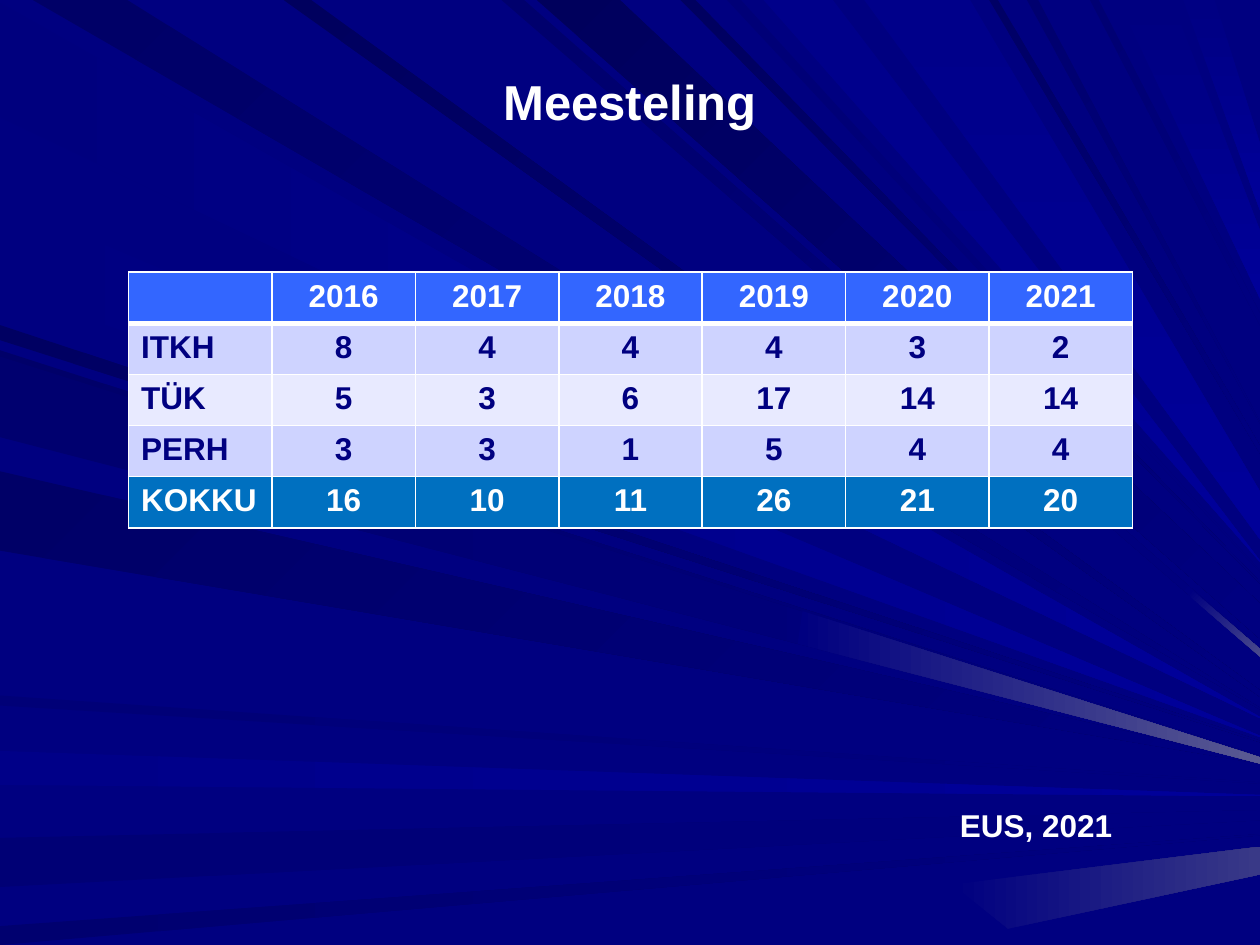
from lxml.etree import SubElement
from pptx import Presentation
from pptx.dml.color import RGBColor
from pptx.enum.text import MSO_ANCHOR, MSO_AUTO_SIZE, PP_ALIGN
from pptx.oxml.ns import qn
from pptx.util import Pt

PX = 9144  # EMU per px, 100 px to the inch
WIDTH, HEIGHT = 1000, 750
FONT = "Arial"
WHITE = "FFFFFF"
NAVY = "000080"
BRIGHT = "000099"
HEADER_FILL = "3366FF"
BAND_FILLS = ("CED3FF", "E8EAFF")
TOTAL_FILL = "0070C0"

# Each ray: start colour, its span on the starting edge, its tip on the right
# edge and, for rays that stay wide, the width of that tip.
LEFT_BRIGHT = [("00007E", 2, 93, 569), ("000088", 596, 623, 631), (NAVY, 159, 228, 584)]
LEFT_SOFT = [
    ("000075", 665, 704, 643, 8),
    ("00006F", 735, 750, 662),
    ("000077", 552, 560, 621),
    ("00006F", 283, 347, 601, 5),
]
LEFT_DARK = [("000062", 258, 270, 588), ("000069", 278, 342, 600), ("000067", 374, 437, 605)]
TOP_DARK = [
    ("000067", 26, 101, 562),
    ("00006D", 398, 416, 515, 6),
    ("00005C", 426, 492, 479, 28),
    ("000060", 540, 552, 462),
    ("00005E", 225, 247, 548, 5),
    ("000077", 577, 588, 453),
    ("000065", 785, 792, 354, 6),
    ("00006F", 815, 824, 335),
    ("000073", 865, 872, 249, 9),
]
TOP_BRIGHT = [
    ("00008A", 606, 661, 445),
    (NAVY, 887, 930, 183, 54),
    ("000083", 939, 964, 114, 53),
    ("00008A", 686, 770, 390, 38),
]

# Pale ends of rays: end colour, clockwise angle, corners
GLINTS = [
    ("5A5A92", 0, [(637, 485), (633, 511), (WIDTH, 606), (WIDTH, 601)]),
    ("4A4A8C", 45, [(947, 469), (944, 473), (WIDTH, 521), (WIDTH, 515)]),
    ("393987", 0, [(756, 702), (800, 737), (WIDTH, 694), (WIDTH, 672)]),
]

CASES = [
    ("", "2016", "2017", "2018", "2019", "2020", "2021"),
    ("ITKH", "8", "4", "4", "4", "3", "2"),
    ("TÜK", "5", "3", "6", "17", "14", "14"),
    ("PERH", "3", "3", "1", "5", "4", "4"),
    ("KOKKU", "16", "10", "11", "26", "21", "20"),
]


def px(*lengths):
    return [length * PX for length in lengths]


def rgb(colour):
    return RGBColor.from_string(colour)


def paint(fill, colour):
    fill.solid()
    fill.fore_color.rgb = rgb(colour)


def write(frame, text, size, colour, align=PP_ALIGN.LEFT):
    paragraph = frame.paragraphs[0]
    paragraph.alignment = align
    run = paragraph.add_run()
    run.text = text
    run.font.name = FONT
    run.font.size = Pt(size)
    run.font.bold = True
    run.font.color.rgb = rgb(colour)


def add_beam(slide, start, end, angle, corners):
    """Outline that fades from start to end at a clockwise angle."""
    builder = slide.shapes.build_freeform(*corners[0], scale=PX)
    builder.add_line_segments(corners[1:], close=True)
    beam = builder.convert_to_shape()
    beam.shadow.inherit = False
    beam.line.fill.background()
    beam.fill.gradient()
    beam.fill.gradient_angle = -angle % 360  # python-pptx counts anticlockwise
    for stop, colour in zip(beam.fill.gradient_stops, (start, end)):
        stop.color.rgb = rgb(colour)


def add_left_rays(slide, rays, end, angle):
    for start, upper, lower, tip, *spread in rays:
        tip_end = tip + sum(spread or [1])
        corners = [(0, upper), (0, lower), (WIDTH, tip_end), (WIDTH, tip)]
        add_beam(slide, start, end, angle, corners)


def add_top_rays(slide, rays, end, angle):
    for start, left, right, tip, *spread in rays:
        tip_end = tip + sum(spread or [1])
        corners = [(left, 0), (right, 0), (WIDTH, tip), (WIDTH, tip_end)]
        add_beam(slide, start, end, angle, corners)


def add_background(slide):
    paint(slide.background.fill, NAVY)
    add_left_rays(slide, LEFT_BRIGHT, BRIGHT, 0)
    add_top_rays(slide, TOP_BRIGHT, BRIGHT, 90)
    add_top_rays(slide, TOP_DARK, NAVY, 45)
    add_left_rays(slide, LEFT_DARK, NAVY, 45)
    add_left_rays(slide, LEFT_SOFT, NAVY, 0)
    for end, angle, corners in GLINTS:
        add_beam(slide, NAVY, end, angle, corners)


def add_title(slide, text):
    title = slide.shapes.title
    title.left, title.top, title.width, title.height = px(50, 30, 900, 101)
    title.text_frame.vertical_anchor = MSO_ANCHOR.MIDDLE
    write(title.text_frame, text, 28, WHITE, PP_ALIGN.CENTER)
    slide.shapes._spTree.append(title._element)  # in front of the rays


def set_borders(cell, top, bottom):
    """White borders, 1 pt at the sides; top and bottom in points."""
    properties = cell._tc.get_or_add_tcPr()
    for side, width in (("L", 1), ("R", 1), ("T", top), ("B", bottom)):
        border = SubElement(properties, qn(f"a:ln{side}"), w=str(Pt(width)))
        solid = SubElement(border, qn("a:solidFill"))
        SubElement(solid, qn("a:srgbClr"), val=WHITE)


def row_colours(row):
    """Fill and text colour of a table row."""
    if row == 0:
        return HEADER_FILL, WHITE
    if row == len(CASES) - 1:
        return TOTAL_FILL, WHITE
    return BAND_FILLS[(row - 1) % 2], NAVY


def add_case_table(slide):
    table = slide.shapes.add_table(len(CASES), len(CASES[0]), *px(102, 216, 797, 203)).table
    table.horz_banding = False
    for row, values in enumerate(CASES):
        fill, colour = row_colours(row)
        for column, value in enumerate(values):
            cell = table.cell(row, column)
            set_borders(cell, 3 if row == 1 else 1, 3 if row == 0 else 1)
            paint(cell.fill, fill)
            if value:
                align = PP_ALIGN.CENTER if column else PP_ALIGN.LEFT
                write(cell.text_frame, value, 18, colour, align)


def add_credit(slide, text):
    frame = slide.shapes.add_textbox(*px(752, 635, 158, 40)).text_frame
    frame.word_wrap = True
    frame.auto_size = MSO_AUTO_SIZE.SHAPE_TO_FIT_TEXT
    write(frame, text, 18, WHITE)


def main():
    deck = Presentation()
    deck.slide_width, deck.slide_height = px(WIDTH, HEIGHT)
    slide = deck.slides.add_slide(deck.slide_layouts[5])
    add_background(slide)
    add_title(slide, "Meesteling")
    add_case_table(slide)
    add_credit(slide, "EUS, 2021")
    deck.save("out.pptx")


if __name__ == "__main__":
    main()
